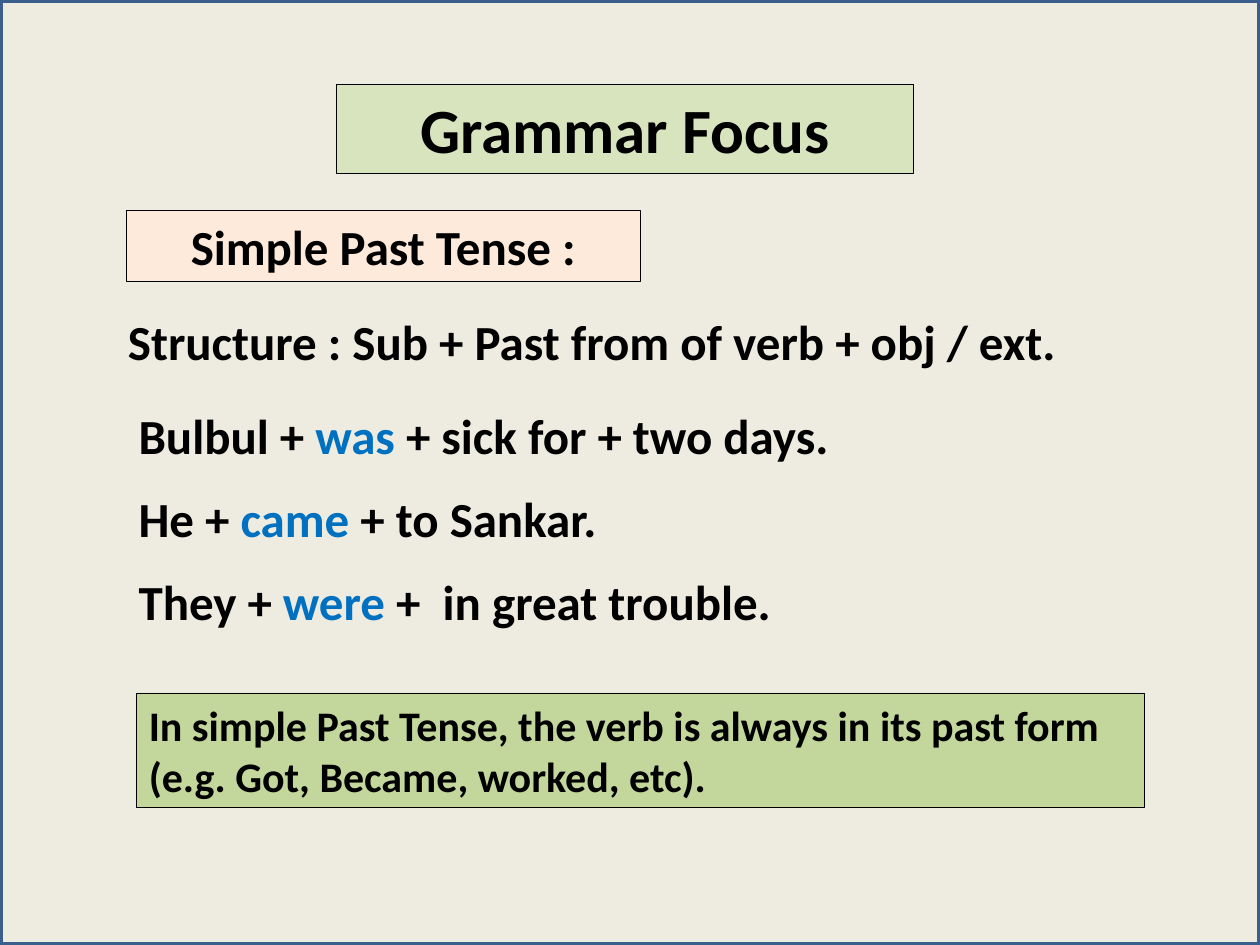
from dataclasses import dataclass

from lxml.etree import SubElement
from pptx import Presentation
from pptx.dml.color import RGBColor as Rgb
from pptx.enum.shapes import MSO_SHAPE as Kind
from pptx.enum.text import MSO_ANCHOR as Anchor, MSO_AUTO_SIZE as Fit, PP_ALIGN as Align
from pptx.oxml.ns import qn
from pptx.util import Cm, Pt


@dataclass(frozen=True)
class Theme:
    font: str = "Calibri"
    back: str = "EEECE1"
    ink: str = "000000"
    verb: str = "0070C0"
    head: str = "D7E4BD"
    tense: str = "FDEADA"
    note: str = "C3D69B"
    edge: str = "3A5F8C"
    big: float = 36
    mid: float = 28
    small: float = 24
    thin: float = 0.25
    thick: float = 3
    gap: float = 13.7


@dataclass(frozen=True)
class Box:
    """Place and size in centimetres."""
    left: float
    top: float
    width: float
    height: float

    def cm(self) -> tuple:
        return Cm(self.left), Cm(self.top), Cm(self.width), Cm(self.height)


@dataclass(frozen=True)
class Case:
    """A sample sentence, split around its verb."""
    start: str
    verb: str
    end: str


LOOK = Theme()
CASES = (
    Case("Bulbul + ", "was ", "+ sick for + two days."),
    Case("He + ", "came", " + to Sankar."),
    Case("They + ", "were", " +  in great trouble."),
)


def write(para, text: str, *, size: float = LOOK.mid, color: str = LOOK.ink,
          align=Align.LEFT) -> None:
    para.alignment = align
    run = para.add_run()
    run.text = text
    font = run.font
    font.name, font.size, font.bold = LOOK.font, Pt(size), True
    font.color.rgb = Rgb.from_string(color)


def place(shape, box: Box) -> None:
    shape.left, shape.top, shape.width, shape.height = box.cm()


def paint(shape, fill: str | None, line: str = LOOK.ink, width: float = LOOK.thin) -> None:
    if fill:
        shape.fill.solid()
        shape.fill.fore_color.rgb = Rgb.from_string(fill)
    else:
        shape.fill.background()
    shape.line.color.rgb = Rgb.from_string(line)
    shape.line.width = Pt(width)


def ready(shape, anchor=Anchor.MIDDLE):
    """Fix the text frame's layout and return the frame."""
    frame = shape.text_frame
    frame.word_wrap, frame.auto_size = True, Fit.NONE
    frame.vertical_anchor = anchor
    return frame


def panel(slide, box: Box, fill: str | None, **line):
    shape = slide.shapes.add_shape(Kind.RECTANGLE, *box.cm())
    shape.shadow.inherit = False
    paint(shape, fill, **line)
    return shape


def label(shape, text: str, **style) -> None:
    write(ready(shape).paragraphs[0], text, **style)


def plain(para) -> None:
    """Drop the bullet and its indent."""
    props = para._p.get_or_add_pPr()
    props.set("marL", "0")
    props.set("indent", "0")
    SubElement(props, qn("a:buNone"))


def samples(shape, cases: tuple[Case, ...]) -> None:
    frame = ready(shape, Anchor.TOP)
    for i, case in enumerate(cases):
        para = frame.add_paragraph() if i else frame.paragraphs[0]
        para.space_before, para.space_after = Pt(0), Pt(LOOK.gap)
        plain(para)
        write(para, case.start)
        write(para, case.verb, color=LOOK.verb)
        write(para, case.end)


def main() -> None:
    deck = Presentation()
    deck.slide_width, deck.slide_height = Cm(25.4), Cm(19.05)
    slide = deck.slides.add_slide(deck.slide_layouts[1])
    back = slide.background.fill
    back.solid()
    back.fore_color.rgb = Rgb.from_string(LOOK.back)

    title, body = slide.shapes.title, slide.placeholders[1]
    place(title, Box(6.78, 1.69, 11.64, 1.8))
    paint(title, LOOK.head)
    label(title, "Grammar Focus", size=LOOK.big, align=Align.CENTER)

    tense = panel(slide, Box(2.54, 4.23, 10.37, 1.45), LOOK.tense)
    label(tense, "Simple Past Tense :", align=Align.CENTER)

    rule = slide.shapes.add_textbox(*Box(2.33, 6.14, 21.17, 1.45).cm())
    label(rule, "Structure : Sub + Past from of verb + obj / ext.")

    place(body, Box(2.54, 8.05, 20.11, 4.83))
    samples(body, CASES)

    note = panel(slide, Box(2.75, 13.97, 20.32, 2.31), LOOK.note)
    label(note, "In simple Past Tense, the verb is always in its past form "
                "(e.g. Got, Became, worked, etc).", size=LOOK.small)

    panel(slide, Box(0, 0, 25.4, 19.05), None, line=LOOK.edge, width=LOOK.thick)
    deck.save("out.pptx")


if __name__ == "__main__":
    main()
